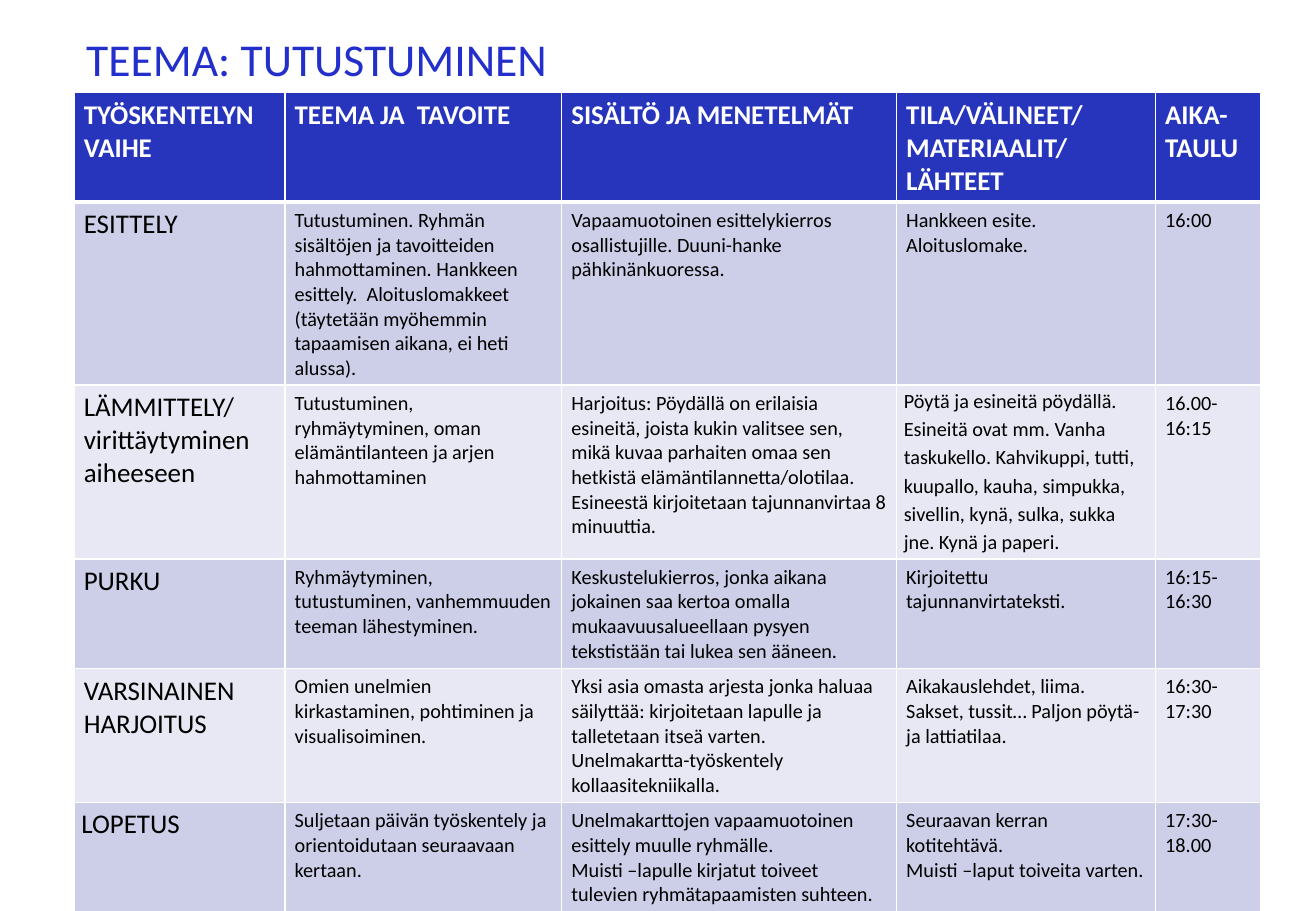
from lxml.etree import SubElement
from pptx import Presentation
from pptx.dml.color import RGBColor
from pptx.enum.text import MSO_ANCHOR
from pptx.oxml.ns import qn
from pptx.util import Pt

FONT = "Calibri"
TITLE_BLUE, HEADER_BLUE = "232FCB", "2735BD"
BANDS = ("E8E8F4", "CDCEE8")
WHITE, BLACK = "FFFFFF", "000000"

COLUMN_WIDTHS = (125, 164, 198.5, 153.5, 62.5)
ROW_HEIGHTS = (64.5, 108.5, 103, 65, 79.5, 64)
COMPACT_CELLS = {(2, 3), (5, 0)}

# A line break inside a cell starts a new paragraph.
SESSION_PLAN = (
    ("TYÖSKENTELYN\nVAIHE",
     "TEEMA JA  TAVOITE",
     "SISÄLTÖ JA MENETELMÄT",
     "TILA/VÄLINEET/ MATERIAALIT/\nLÄHTEET",
     "AIKA-TAULU"),
    ("ESITTELY",
     "Tutustuminen. Ryhmän sisältöjen ja tavoitteiden hahmottaminen. Hankkeen "
     "esittely.  Aloituslomakkeet (täytetään myöhemmin tapaamisen aikana, ei heti alussa).",
     "Vapaamuotoinen esittelykierros osallistujille. Duuni-hanke pähkinänkuoressa.",
     "Hankkeen esite. Aloituslomake.",
     "16:00"),
    ("LÄMMITTELY/ virittäytyminen aiheeseen",
     "Tutustuminen, ryhmäytyminen, oman elämäntilanteen ja arjen hahmottaminen",
     "Harjoitus: Pöydällä on erilaisia esineitä, joista kukin valitsee sen, mikä kuvaa "
     "parhaiten omaa sen hetkistä elämäntilannetta/olotilaa. Esineestä kirjoitetaan "
     "tajunnanvirtaa 8 minuuttia.",
     "Pöytä ja esineitä pöydällä. Esineitä ovat mm. Vanha taskukello. Kahvikuppi, tutti, "
     "kuupallo, kauha, simpukka, sivellin, kynä, sulka, sukka jne. Kynä ja paperi.",
     "16.00-16:15"),
    ("PURKU",
     "Ryhmäytyminen, tutustuminen, vanhemmuuden teeman lähestyminen.",
     "Keskustelukierros, jonka aikana jokainen saa kertoa omalla mukaavuusalueellaan "
     "pysyen tekstistään tai lukea sen ääneen.",
     "Kirjoitettu tajunnanvirtateksti.",
     "16:15-16:30"),
    ("VARSINAINEN\nHARJOITUS",
     "Omien unelmien kirkastaminen, pohtiminen ja visualisoiminen.",
     "Yksi asia omasta arjesta jonka haluaa säilyttää: kirjoitetaan lapulle ja "
     "talletetaan itseä varten.\nUnelmakartta-työskentely kollaasitekniikalla.",
     "Aikakauslehdet, liima. Sakset, tussit… Paljon pöytä- ja lattiatilaa.",
     "16:30-17:30"),
    ("LOPETUS",
     "Suljetaan päivän työskentely ja orientoidutaan seuraavaan kertaan.",
     "Unelmakarttojen vapaamuotoinen esittely muulle ryhmälle.\n"
     "Muisti –lapulle kirjatut toiveet tulevien ryhmätapaamisten suhteen.",
     "Seuraavan kerran kotitehtävä.\nMuisti –laput toiveita varten.",
     "17:30-18.00"),
)


def color(code):
    return RGBColor.from_string(code)


def write_text(frame, text, size, code, bold=False):
    for index, line in enumerate(text.split("\n")):
        para = frame.add_paragraph() if index else frame.paragraphs[0]
        span = para.add_run()
        span.text = line
        span.font.name = FONT
        span.font.size = Pt(size)
        span.font.bold = bold
        span.font.color.rgb = color(code)


def set_borders(cell, top, bottom):
    """Draw white borders; call before the fill, which must follow them in the XML."""
    properties = cell._tc.get_or_add_tcPr()
    for side, width in (("L", 1), ("R", 1), ("T", top), ("B", bottom)):
        line = SubElement(properties, qn(f"a:ln{side}"), w=str(Pt(width)))
        fill = SubElement(line, qn("a:solidFill"))
        SubElement(fill, qn("a:srgbClr"), val=WHITE)


def set_margins(cell, side, edge):
    cell.margin_left = cell.margin_right = Pt(side)
    cell.margin_top = cell.margin_bottom = Pt(edge)


def fill_cell(cell, row, column, text):
    header = row == 0
    set_borders(cell, top=3 if row == 1 else 1, bottom=3 if header else 1)
    cell.fill.solid()
    cell.fill.fore_color.rgb = color(HEADER_BLUE if header else BANDS[row % 2])
    write_text(cell.text_frame, text, 16 if header or column == 0 else 12,
               WHITE if header else BLACK, header)
    if (row, column) in COMPACT_CELLS:
        set_margins(cell, 4.3, 0)
        para = cell.text_frame.paragraphs[0]
        para.line_spacing = 1.15
        para.space_after = Pt(10)
    else:
        set_margins(cell, 5.7, 3.6)


def add_title(page, text):
    box = page.shapes.add_textbox(Pt(44), Pt(14.5), Pt(683), Pt(40))
    box.text_frame.word_wrap = True
    box.text_frame.vertical_anchor = MSO_ANCHOR.BOTTOM
    write_text(box.text_frame, text, 27, TITLE_BLUE)


def add_plan_table(page):
    table = page.shapes.add_table(
        len(ROW_HEIGHTS), len(COLUMN_WIDTHS), Pt(44), Pt(55),
        Pt(sum(COLUMN_WIDTHS)), Pt(sum(ROW_HEIGHTS))).table
    table.first_row = table.horz_banding = False
    for column, width in zip(table.columns, COLUMN_WIDTHS):
        column.width = Pt(width)
    for row, height in zip(table.rows, ROW_HEIGHTS):
        row.height = Pt(height)
    for row, texts in enumerate(SESSION_PLAN):
        for column, text in enumerate(texts):
            fill_cell(table.cell(row, column), row, column, text)


def main():
    deck = Presentation()
    deck.slide_width, deck.slide_height = Pt(780), Pt(540)
    page = deck.slides.add_slide(deck.slide_layouts[6])
    add_title(page, "TEEMA: TUTUSTUMINEN")
    add_plan_table(page)
    deck.save("out.pptx")


if __name__ == "__main__":
    main()
